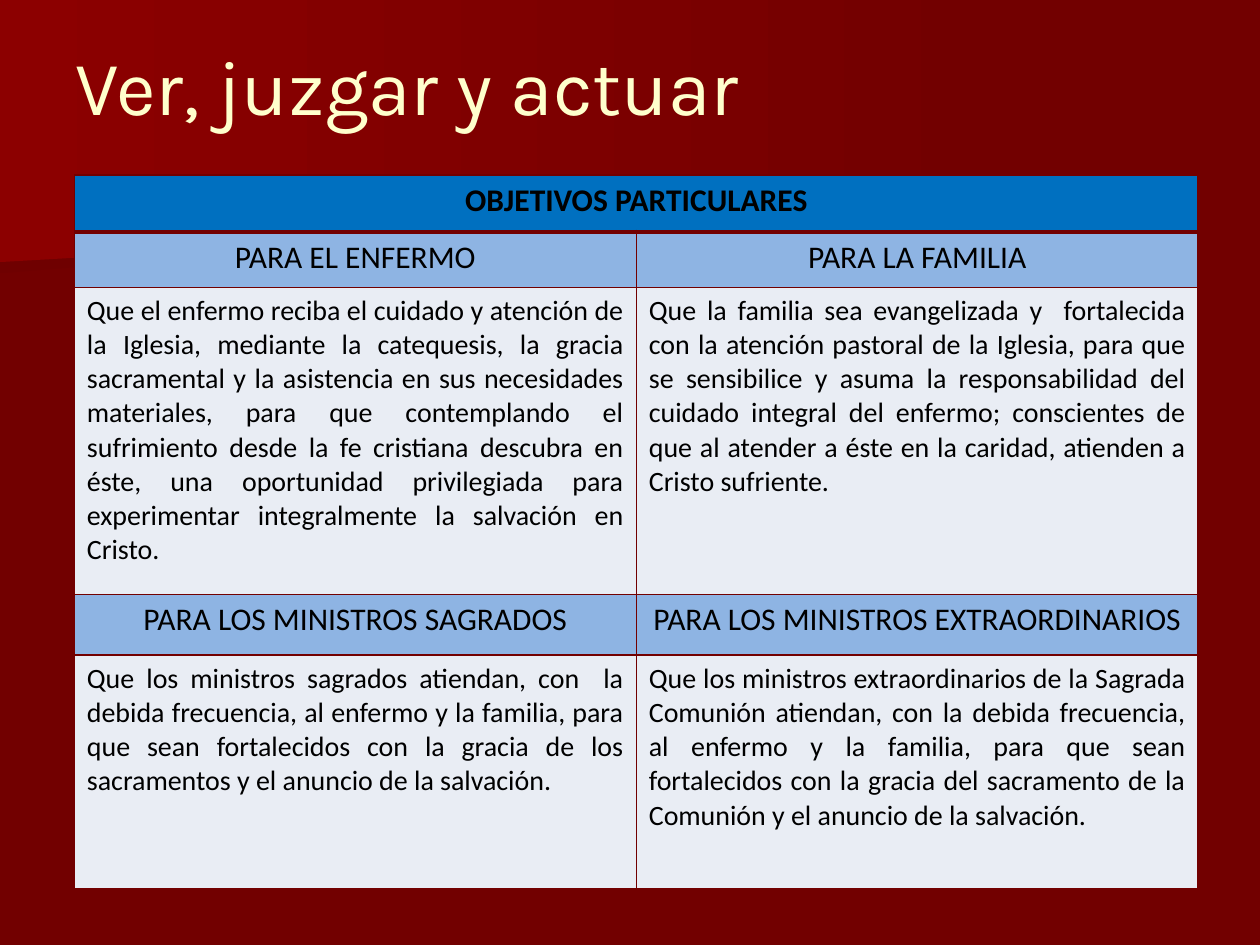
from collections import namedtuple

from lxml import etree
from pptx import Presentation
from pptx.dml.color import RGBColor
from pptx.enum.text import MSO_ANCHOR, PP_ALIGN
from pptx.oxml.ns import qn
from pptx.util import Inches, Pt

CENTER, JUSTIFY, LEFT = PP_ALIGN.CENTER, PP_ALIGN.JUSTIFY, PP_ALIGN.LEFT
MIDDLE = MSO_ANCHOR.MIDDLE

COLORS = {
    "background": "720000",
    "shade": "6F0000",
    "glow": "8C0000",
    "title": "FFFFCC",
    "text": "000000",
    "banner": "0070C0",
    "heading": "8EB4E3",
    "body": "E9EDF4",
}
GRID_COLUMNS, GRID_ROWS = 100, 75
UNIT = Inches(10) // GRID_COLUMNS

Box = namedtuple("Box", "left top width height")
Style = namedtuple("Style", "fill size bold align")

BANNER = Style("banner", 18, True, CENTER)
HEADING = Style("heading", 18, False, CENTER)
BODY = Style("body", 16, False, JUSTIFY)

ROW_HEIGHTS = (4.5, 4.4, 24.4, 4.8, 18.5)
OBJECTIVES = (
    (BANNER, ("OBJETIVOS PARTICULARES", "")),
    (HEADING, ("PARA EL ENFERMO", "PARA LA FAMILIA")),
    (BODY, (
        "Que el enfermo reciba el cuidado y atención de la Iglesia, mediante la "
        "catequesis, la gracia sacramental y la asistencia en sus necesidades "
        "materiales, para que contemplando el sufrimiento desde la fe cristiana "
        "descubra en éste, una oportunidad privilegiada para experimentar "
        "integralmente la salvación en Cristo.",
        "Que la familia sea evangelizada y  fortalecida con la atención pastoral "
        "de la Iglesia, para que se sensibilice y asuma la responsabilidad del "
        "cuidado integral del enfermo; conscientes de que al atender a éste en la "
        "caridad, atienden a Cristo sufriente.",
    )),
    (HEADING, ("PARA LOS MINISTROS SAGRADOS", "PARA LOS MINISTROS EXTRAORDINARIOS")),
    (BODY, (
        "Que los ministros sagrados atiendan, con  la debida frecuencia, al enfermo "
        "y la familia, para que sean fortalecidos con la gracia de los sacramentos "
        "y el anuncio de la salvación.",
        "Que los ministros extraordinarios de la Sagrada Comunión atiendan, con la "
        "debida frecuencia, al enfermo y la familia, para que sean fortalecidos con "
        "la gracia del sacramento de la Comunión y el anuncio de la salvación.",
    )),
)


def grid(units):
    """Turn grid units into a slide length."""
    return round(units * UNIT)


def color(name):
    """Look up a named colour."""
    return RGBColor.from_string(COLORS[name])


def add_span(para, text, font, size, ink, bold=False):
    """Add one formatted run to a paragraph."""
    span = para.add_run()
    span.text = text
    span.font.name = font
    span.font.size = Pt(size)
    span.font.bold = bold
    span.font.color.rgb = color(ink)


def add_band(page, box, slant, start):
    """Draw a gradient band whose right side ends at the share slant of its height."""
    corners = [(1, slant), (0, 1), (0, 0), (1, 0)]
    points = [(grid(box.left + x * box.width), grid(box.top + y * box.height))
              for x, y in corners]
    builder = page.shapes.build_freeform(*points[0])
    builder.add_line_segments(points[1:], close=True)
    band = builder.convert_to_shape()
    band.shadow.inherit = False
    band.line.fill.background()
    band.fill.gradient()
    band.fill.gradient_angle = 0
    for stop, name, position in zip(band.fill.gradient_stops, (start, "background"), (0, 1)):
        stop.color.rgb = color(name)
        stop.position = position


def add_title(page, box, text):
    """Place the slide title in its box."""
    frame = page.shapes.add_textbox(*map(grid, box)).text_frame
    frame.word_wrap = True
    frame.vertical_anchor = MIDDLE
    para = frame.paragraphs[0]
    para.alignment = LEFT
    add_span(para, text, "Karla", 44, "title")


def set_borders(cell, widths):
    """Give the left, right, top and bottom edges their widths in points."""
    properties = cell._tc.get_or_add_tcPr()
    for index, (edge, width) in enumerate(zip("LRTB", widths)):
        line = etree.Element(qn(f"a:ln{edge}"), w=str(Pt(width)))
        fill = etree.SubElement(line, qn("a:solidFill"))
        etree.SubElement(fill, qn("a:srgbClr"), val=COLORS["background"])
        properties.insert(index, line)


def add_objectives(page, box, rows):
    """Place the table of objectives under one merged banner."""
    count = len(rows[0][1])
    table = page.shapes.add_table(len(rows), count, *map(grid, box)).table
    table.first_row = table.horz_banding = False
    for column in table.columns:
        column.width = grid(box.width / count)
    for row, height in zip(table.rows, ROW_HEIGHTS):
        row.height = grid(height)
    table.cell(0, 0).merge(table.cell(0, count - 1))
    for r, (style, texts) in enumerate(rows):
        for c, text in enumerate(texts):
            cell = table.cell(r, c)
            cell.fill.solid()
            cell.fill.fore_color.rgb = color(style.fill)
            set_borders(cell, (1, 1, 3 if r == 1 else 1, 3 if r == 0 else 1))
            if text:
                para = cell.text_frame.paragraphs[0]
                para.alignment = style.align
                add_span(para, text, "Calibri", style.size, "text", style.bold)


def main():
    """Build and save the slide."""
    deck = Presentation()
    deck.slide_width, deck.slide_height = grid(GRID_COLUMNS), grid(GRID_ROWS)
    page = deck.slides.add_slide(deck.slide_layouts[6])
    page.background.fill.solid()
    page.background.fill.fore_color.rgb = color("background")
    add_band(page, Box(0, 10.1, 77.9, 11.6), 0.45, "shade")
    add_band(page, Box(0, 0, 79.2, 20.8), 0.78, "glow")
    add_title(page, Box(5, 0.5, 90, 12.5), "Ver, juzgar y actuar")
    add_objectives(page, Box(5.9, 13.9, 89.2, sum(ROW_HEIGHTS)), OBJECTIVES)
    deck.save("out.pptx")


if __name__ == "__main__":
    main()
